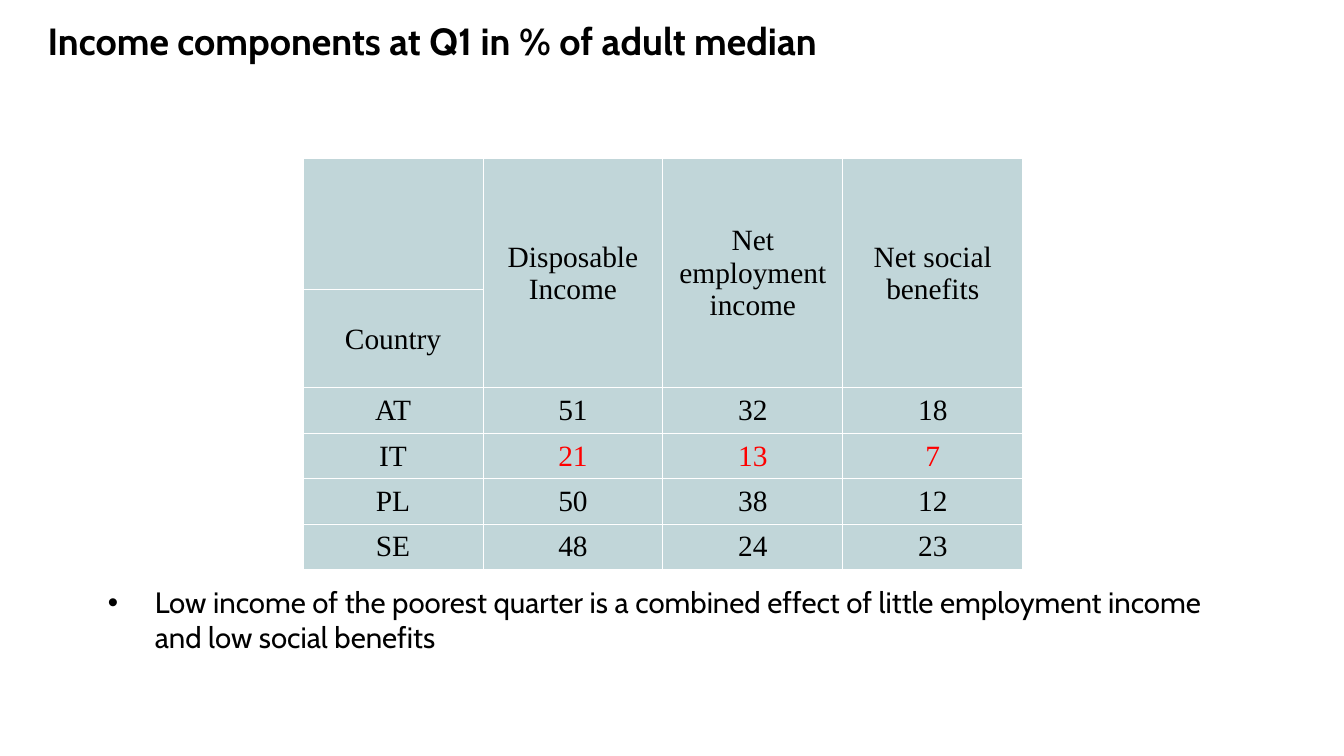
from lxml.etree import SubElement
from pptx import Presentation
from pptx.dml.color import RGBColor
from pptx.enum.text import MSO_ANCHOR, MSO_AUTO_SIZE, PP_ALIGN
from pptx.oxml import parse_xml
from pptx.oxml.ns import nsdecls, qn
from pptx.util import Inches, Pt

TITLE = "Income components at Q1 in % of adult median"
NOTE = ("Low income of the poorest quarter is a combined effect of "
        "little employment income and low social benefits")
ROWS = [
    ["", "Disposable\nIncome", "Net employment\nincome", "Net social\nbenefits"],
    ["Country", "", "", ""],
    ["AT", "51", "32", "18"],
    ["IT", "21", "13", "7"],
    ["PL", "50", "38", "12"],
    ["SE", "48", "24", "23"],
]
HIGHLIGHT = "IT"

BLACK = RGBColor(0x00, 0x00, 0x00)
RED = RGBColor(0xFF, 0x00, 0x00)
WHITE = RGBColor(0xFF, 0xFF, 0xFF)
TEAL = RGBColor(0x32, 0x78, 0x82)

WIDTH, HEIGHT = 17.78, 10
COL_W, HEAD_H, ROW_H = 2.38, 1.74, 0.6
TABLE_X, TABLE_Y = 4.01, 2.09

TITLE_FONT = dict(name="Cabin", size=Pt(36), bold=True)
NOTE_FONT = dict(name="Cabin", size=Pt(28))
CELL_FONT = dict(name="Times New Roman", size=Pt(28))
CELL_FORMAT = dict(vertical_anchor=MSO_ANCHOR.MIDDLE, margin_left=Inches(0.01),
                   margin_right=Inches(0.01), margin_top=Inches(0.01), margin_bottom=0)


def apply(obj, values):
    for key, value in values.items():
        setattr(obj, key, value)


def write(tf, text, font, color=BLACK, align=PP_ALIGN.LEFT):
    tf.text = text
    for p in tf.paragraphs:
        p.alignment = align
        for r in p.runs:
            apply(r.font, font)
            r.font.color.rgb = color


def indent(p, left, first=0):
    pPr = p._p.get_or_add_pPr()
    pPr.set("marL", str(Inches(left)))
    pPr.set("indent", str(Inches(first)))
    return pPr


def style_cell(cell):
    apply(cell, CELL_FORMAT)
    cell.fill.solid()
    cell.fill.fore_color.rgb = TEAL
    tcPr = cell._tc.get_or_add_tcPr()
    SubElement(tcPr.find(".//" + qn("a:srgbClr")), qn("a:alpha"), val="30000")
    for i, side in enumerate("LRTB"):
        tcPr.insert(i, parse_xml(
            f'<a:ln{side} {nsdecls("a")} w="{Pt(1)}"><a:solidFill>'
            f'<a:srgbClr val="{WHITE}"/></a:solidFill></a:ln{side}>'))


prs = Presentation()
prs.slide_width, prs.slide_height = Inches(WIDTH), Inches(HEIGHT)
s = prs.slides.add_slide(prs.slide_layouts[5])

title = s.shapes.title
apply(title, dict(left=0, top=0, width=prs.slide_width, height=Inches(1.06)))
title.text_frame.vertical_anchor = MSO_ANCHOR.MIDDLE
write(title.text_frame, TITLE, TITLE_FONT)
indent(title.text_frame.paragraphs[0], 0.53)

n_rows, n_cols = len(ROWS), len(ROWS[0])
heights = [HEAD_H] + [ROW_H] * (n_rows - 1)
table = s.shapes.add_table(n_rows, n_cols, Inches(TABLE_X), Inches(TABLE_Y),
                           Inches(COL_W * n_cols), Inches(sum(heights))).table
apply(table, dict(first_row=False, horz_banding=False))
for col in table.columns:
    col.width = Inches(COL_W)
for r, (values, height) in enumerate(zip(ROWS, heights)):
    table.rows[r].height = Inches(height)
    for c, value in enumerate(values):
        cell = table.cell(r, c)
        color = RED if values[0] == HIGHLIGHT and c else BLACK
        write(cell.text_frame, value, CELL_FONT, color, PP_ALIGN.CENTER)
        style_cell(cell)
for c in range(1, n_cols):
    table.cell(0, c).merge(table.cell(1, c))

note = s.shapes.add_textbox(Inches(1.33), Inches(7.68), Inches(15.04), Inches(1.04))
tf = note.text_frame
apply(tf, dict(word_wrap=True, auto_size=MSO_AUTO_SIZE.SHAPE_TO_FIT_TEXT))
write(tf, NOTE, NOTE_FONT)
pPr = indent(tf.paragraphs[0], 0.62, -0.62)
SubElement(pPr, qn("a:buFont"), typeface="Arial")
SubElement(pPr, qn("a:buChar"), char="•")

prs.save("out.pptx")
